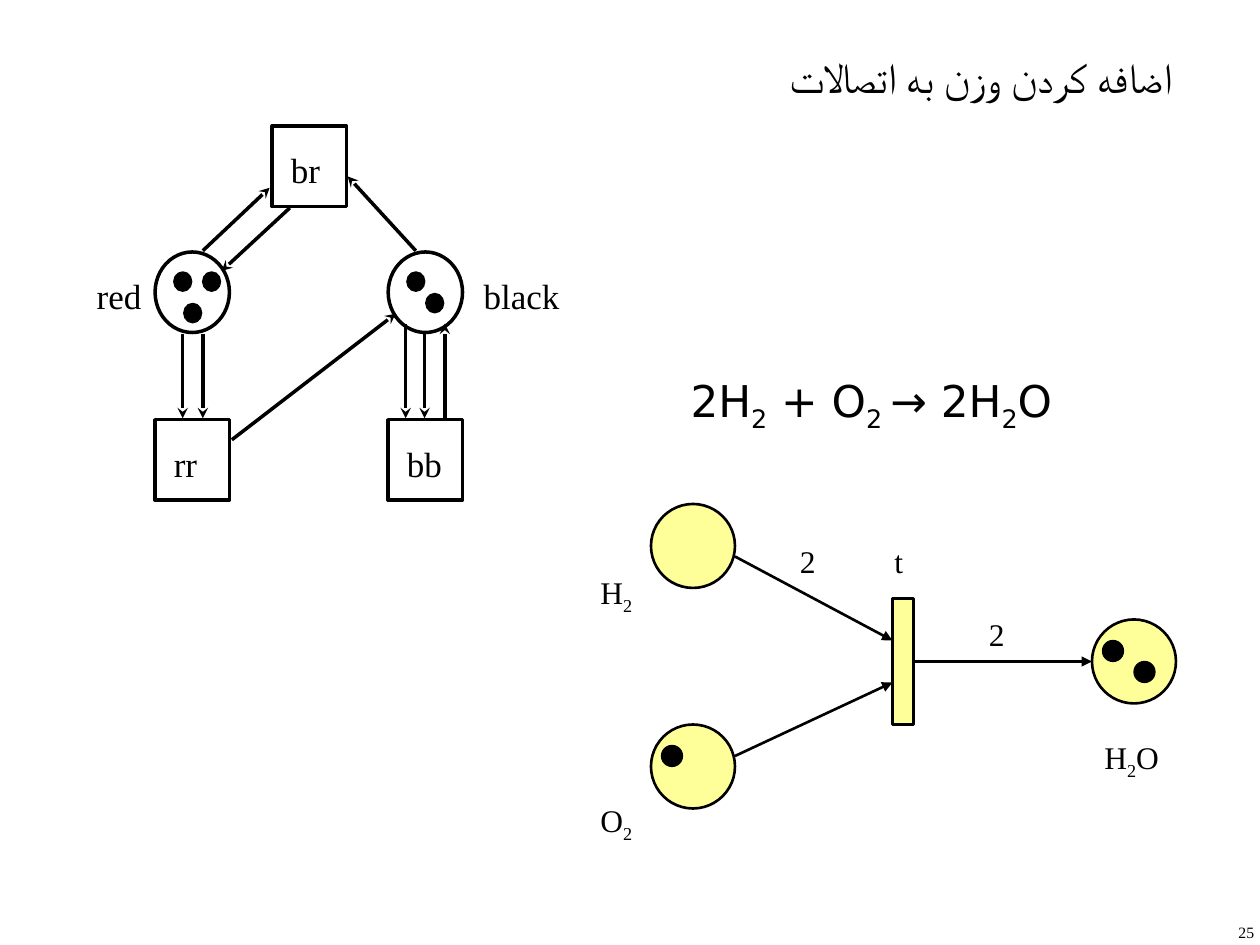
from pptx import Presentation
from pptx.dml.color import RGBColor
from pptx.enum.shapes import MSO_CONNECTOR, MSO_SHAPE
from pptx.enum.text import MSO_ANCHOR, PP_ALIGN
from pptx.oxml.ns import qn
from pptx.util import Pt
from lxml.etree import SubElement

COLOURS = {"ink": "000000", "place": "FFFF99", "paper": "FFFFFF"}
SERIF, SANS = "Times New Roman", "DejaVu Sans"


class PetriSlide:
    """Draws Petri net elements on one slide, with lengths in points."""

    def __init__(self, slide):
        self.slide = slide
        slide.background.fill.solid()
        slide.background.fill.fore_color.rgb = self.colour("paper")

    def colour(self, name):
        return RGBColor.from_string(COLOURS[name])

    def shape(self, kind, left, top, width, height, line_width, fill=None):
        shape = self.slide.shapes.add_shape(kind, Pt(left), Pt(top), Pt(width), Pt(height))
        shape.shadow.inherit = False
        shape.line.color.rgb = self.colour("ink")
        shape.line.width = Pt(line_width)
        if fill:
            shape.fill.solid()
            shape.fill.fore_color.rgb = self.colour(fill)
        else:
            shape.fill.background()

    def arrow(self, start, end, line_width, head):
        points = [Pt(value) for value in (*start, *end)]
        connector = self.slide.shapes.add_connector(MSO_CONNECTOR.STRAIGHT, *points)
        connector.line.color.rgb = self.colour("ink")
        connector.line.width = Pt(line_width)
        SubElement(connector.line._get_or_add_ln(), qn("a:tailEnd"), type=head)
        SubElement(connector._element.spPr, qn("a:effectLst"))

    def text(self, parts, left, top, width, height, size, font=SERIF, wrap=True,
             insets=(7.2, 3.6), spacing=None, before=None, align=PP_ALIGN.LEFT):
        """Writes parts that alternate between normal and subscript."""
        box = self.slide.shapes.add_textbox(Pt(left), Pt(top), Pt(width), Pt(height))
        frame = box.text_frame
        frame.word_wrap = wrap
        frame.vertical_anchor = MSO_ANCHOR.TOP
        frame.margin_left = frame.margin_right = Pt(insets[0])
        frame.margin_top = frame.margin_bottom = Pt(insets[1])
        paragraph = frame.paragraphs[0]
        paragraph.alignment = align
        paragraph.line_spacing = spacing
        paragraph.space_before = before
        for index, part in enumerate(parts):
            run = paragraph.add_run()
            run.text = part
            run.font.size = Pt(size)
            run.font.name = font
            run.font.color.rgb = self.colour("ink")
            if index % 2:
                run.font._element.set("baseline", "-25000")


def draw_ball_net(page):
    """Draws the net of red and black balls."""
    left, middle, right = 88.6, 155.5, 221.8
    upper, centre, lower = 72, 144, 239.8
    for name, x, y, width in (("br", middle, upper, 31.7), ("rr", left, lower, 28.1),
                              ("bb", right, lower, 34.6)):
        page.shape(MSO_SHAPE.RECTANGLE, x, y, 42.5, 46, 2)
        page.text([name], x + 3.6, y + 9.4, width, 31.7, 20, wrap=False)
    for name, x, label_x, width in (("red", left, 48.2, 40.3), ("black", right, 269.3, 58.3)):
        page.shape(MSO_SHAPE.OVAL, x, centre, 42.5, 46, 2)
        page.text([name], label_x, 153.4, width, 31.7, 20, wrap=False)
    for x, y in ((99.4, 155.5), (115.9, 155.5), (105.1, 173.5), (232.6, 155.5), (243.4, 167.8)):
        page.shape(MSO_SHAPE.OVAL, x, y, 10, 10.8, 1, "ink")
    for start, end in (
        ((237.6, 143.3), (198.7, 100.8)),
        ((115.9, 143.3), (154.1, 107.3)),
        ((165.6, 118.8), (126.7, 154.8)),
        ((132.5, 251.3), (226.1, 179.3)),
        ((104.4, 190.8), (104.4, 239)),
        ((115.9, 190.8), (115.9, 239)),
        ((231.8, 185), (231.8, 239)),
        ((242.6, 190.8), (242.6, 239)),
        ((254.2, 239), (254.2, 185)),
    ):
        page.arrow(start, end, 2, "stealth")


def draw_water_net(page):
    """Draws the weighted net of the water reaction."""
    for x, y in ((372, 288), (372, 414), (624, 354)):
        page.shape(MSO_SHAPE.OVAL, x, y, 48, 48, 1.5, "place")
    page.shape(MSO_SHAPE.RECTANGLE, 510, 342, 12, 72, 1.5, "place")
    for start, end in (((420, 318), (510, 366)), ((420, 432), (510, 390)),
                       ((522, 378), (624, 378))):
        page.arrow(start, end, 1.5, "triangle")
    for parts, x, y, width in (
        (["H", "2"], 336, 324, 38),
        (["O", "2"], 336, 454, 38),
        (["H", "2", "O"], 624, 418, 53),
        (["t"], 504, 306, 38),
        (["2"], 558, 348, 38),
        (["2"], 450, 306, 38),
    ):
        page.text(parts, x, y, width, 31, 18)
    for x, y in ((648, 378), (630, 366), (378, 426)):
        page.shape(MSO_SHAPE.OVAL, x, y, 12, 12, 0.75, "ink")


def main():
    presentation = Presentation()
    presentation.slide_width, presentation.slide_height = Pt(720), Pt(540)
    page = PetriSlide(presentation.slides.add_slide(presentation.slide_layouts[6]))
    page.text(["25"], 702.7, 524.9, 20.9, 15.1, 9, wrap=False, insets=(5, 2.2), spacing=1.02)
    page.text(["اضافه کردن وزن به اتصالات"], 444.2, 30.2, 250.6, 31.7, 24, spacing=0.85)
    draw_ball_net(page)
    page.text(["2H", "2", " + O", "2 ", "→ 2H", "2", "O"], 293.8, 210.2, 408.2, 324, 25,
              font=SANS, before=Pt(5), align=PP_ALIGN.CENTER)
    draw_water_net(page)
    presentation.save("out.pptx")


if __name__ == "__main__":
    main()
